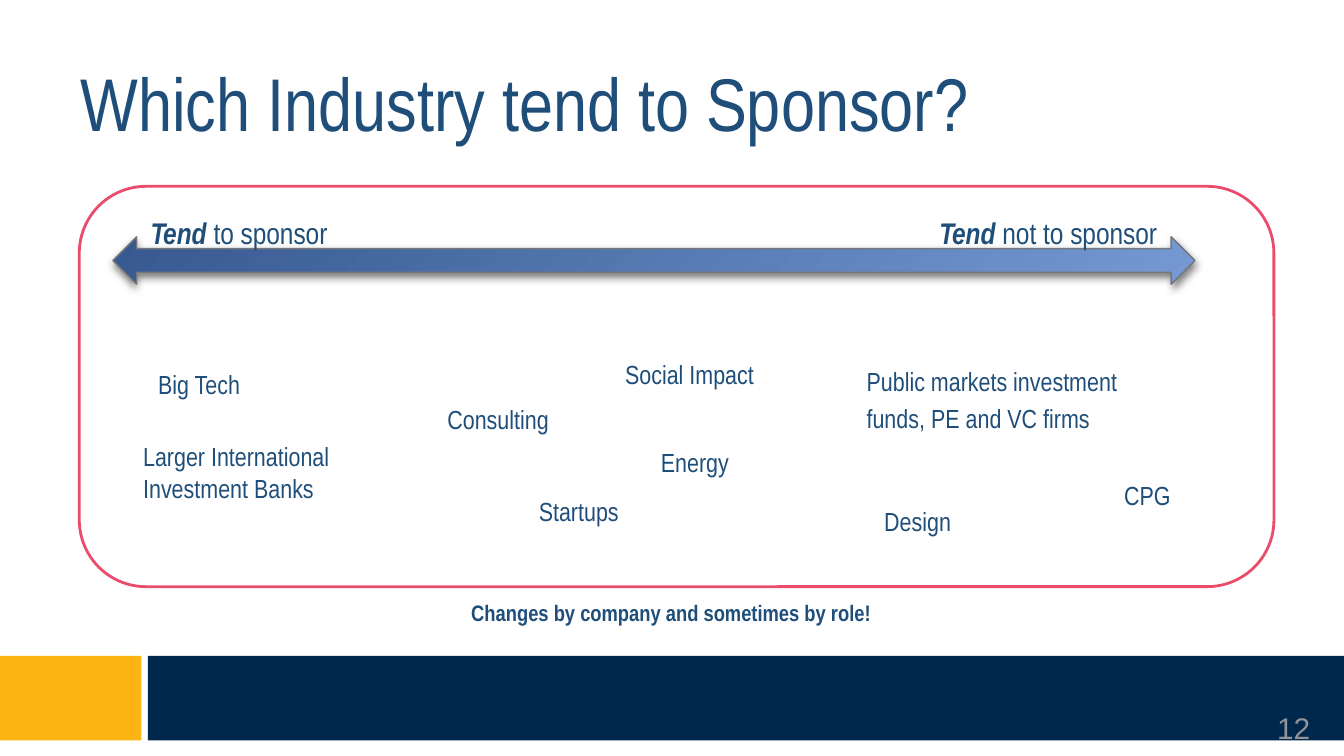
from pptx import Presentation
from pptx import util as u
from pptx.dml.color import RGBColor
from pptx.enum import shapes, text
from pptx.oxml import ns, parse_xml

BLUE = RGBColor(0x1E, 0x4E, 0x79)
NAVY = RGBColor(0x00, 0x27, 0x4C)
GOLD = RGBColor(0xFD, 0xB5, 0x15)
ROSE = RGBColor(0xEA, 0x4D, 0x6C)
GRAY = RGBColor(0x92, 0x94, 0x96)
EDGE = RGBColor(0x75, 0x77, 0x7B)
LIGHT = RGBColor(0x76, 0x99, 0xD4)
DARK = RGBColor(0x37, 0x58, 0x91)
Kind = shapes.MSO_SHAPE
Align = text.PP_ALIGN


class Painter:
    font = "Arial Narrow"
    inset = 7.2

    def __init__(self, page):
        self.page = page

    def style(self, span, size, color=BLUE, bold=False, italic=False, font=None):
        span.font.name = font or self.font
        span.font.size = u.Pt(size)
        span.font.color.rgb = color
        span.font.bold = bold
        span.font.italic = italic

    def title(self, words, left, top, width, height):
        box = self.page.shapes.title
        box.left, box.top = u.Pt(left), u.Pt(top)
        box.width, box.height = u.Pt(width), u.Pt(height)
        frame = box.text_frame
        frame.text = words
        frame.auto_size = text.MSO_AUTO_SIZE.NONE
        frame.vertical_anchor = text.MSO_ANCHOR.MIDDLE
        para = frame.paragraphs[0]
        para.alignment = Align.LEFT
        self.style(para.runs[0], 40)

    def label(self, words, left, top, width, height, size=14, align=Align.LEFT,
              spacing=None, inset=inset, lead=None, **look):
        box = self.page.shapes.add_textbox(*map(u.Pt, (left, top, width, height)))
        frame = box.text_frame
        frame.word_wrap = True
        frame.margin_left = frame.margin_right = u.Pt(self.inset)
        frame.margin_top = frame.margin_bottom = u.Pt(inset)
        para = frame.paragraphs[0]
        para.text = lead or words
        para.alignment = align
        if spacing:
            para.line_spacing = spacing
        if lead:
            self.style(para.runs[0], size, bold=True, italic=True)
            para.add_run().text = words
        self.style(para.runs[-1], size, **look)

    def shape(self, kind, left, top, width, height, fill=None, line=None, weight=0.75):
        shape = self.page.shapes.add_shape(kind, *map(u.Pt, (left, top, width, height)))
        shape.shadow.inherit = False
        if fill:
            shape.fill.solid()
            shape.fill.fore_color.rgb = fill
        else:
            shape.fill.background()
        if line:
            shape.line.color.rgb = line
            shape.line.width = u.Pt(weight)
        else:
            shape.line.fill.background()
        return shape

    def scale_arrow(self, left, top, width, height):
        arrow = self.shape(Kind.LEFT_RIGHT_ARROW, left, top, width, height, line=EDGE)
        arrow.fill.gradient()
        for stop, color in zip(arrow.fill.gradient_stops, (LIGHT, DARK)):
            stop.color.rgb = color
        properties = arrow.element.spPr
        linear = properties.find(ns.qn("a:gradFill")).find(ns.qn("a:lin"))
        linear.getparent().replace(linear, parse_xml(
            f'<a:path {ns.nsdecls("a")} path="circle">'
            '<a:fillToRect l="100000" t="100000"/></a:path>'))
        properties.find(ns.qn("a:effectLst")).append(parse_xml(
            f'<a:outerShdw {ns.nsdecls("a")} blurRad="{u.Pt(4.5)}" dist="{u.Pt(1.5)}" '
            'dir="5400000" rotWithShape="0"><a:srgbClr val="000000">'
            '<a:alpha val="50000"/></a:srgbClr></a:outerShdw>'))


def main():
    deck = Presentation()
    deck.slide_width, deck.slide_height = u.Pt(720), u.Pt(405)
    painter = Painter(deck.slides.add_slide(deck.slide_layouts[5]))

    painter.shape(Kind.RECTANGLE, -0.5, 351.4, 76.3, 45.2, fill=GOLD)
    painter.shape(Kind.RECTANGLE, 79.2, 351.4, 640.8, 45.2, fill=NAVY)
    painter.label("12", 666, 376.6, 54, 21.6, size=16, align=Align.CENTER,
                  inset=3.6, color=GRAY, font="Arial")
    painter.title("Which Industry tend to Sponsor?", 36, 23, 648, 62.6)

    painter.scale_arrow(60.5, 126.9, 579.6, 25.4)
    painter.label("to sponsor", 73.6, 108, 111, 25, size=16, lead="Tend ")
    painter.label("not to sponsor", 496.2, 108, 162, 25, size=16, lead="Tend ")

    industries = [
        ("Big Tech", 77.6, 190, 111, None),
        ("Larger International Investment Banks", 69.6, 229, 131, None),
        ("Public markets investment funds, PE and VC firms", 457.2, 185, 180, 1.2),
        ("Social Impact", 327.8, 185, 180, None),
        ("Consulting", 232.6, 209, 180, None),
        ("Startups", 281.6, 258, 180, None),
        ("CPG", 595.2, 246.2, 56, 1.2),
        ("Energy", 347, 231.8, 180, None),
        ("Design", 466.6, 263.5, 180, None),
    ]
    for name, left, top, width, spacing in industries:
        painter.label(name, left, top, width, 52, spacing=spacing)

    painter.label("Changes by company and sometimes by role!", 89.3, 314, 540.7, 52,
                  size=12, align=Align.CENTER, bold=True)
    painter.shape(Kind.ROUNDED_RECTANGLE, 42.5, 99.8, 640, 214.5, line=ROSE, weight=1.5)
    deck.save("out.pptx")


if __name__ == "__main__":
    main()
